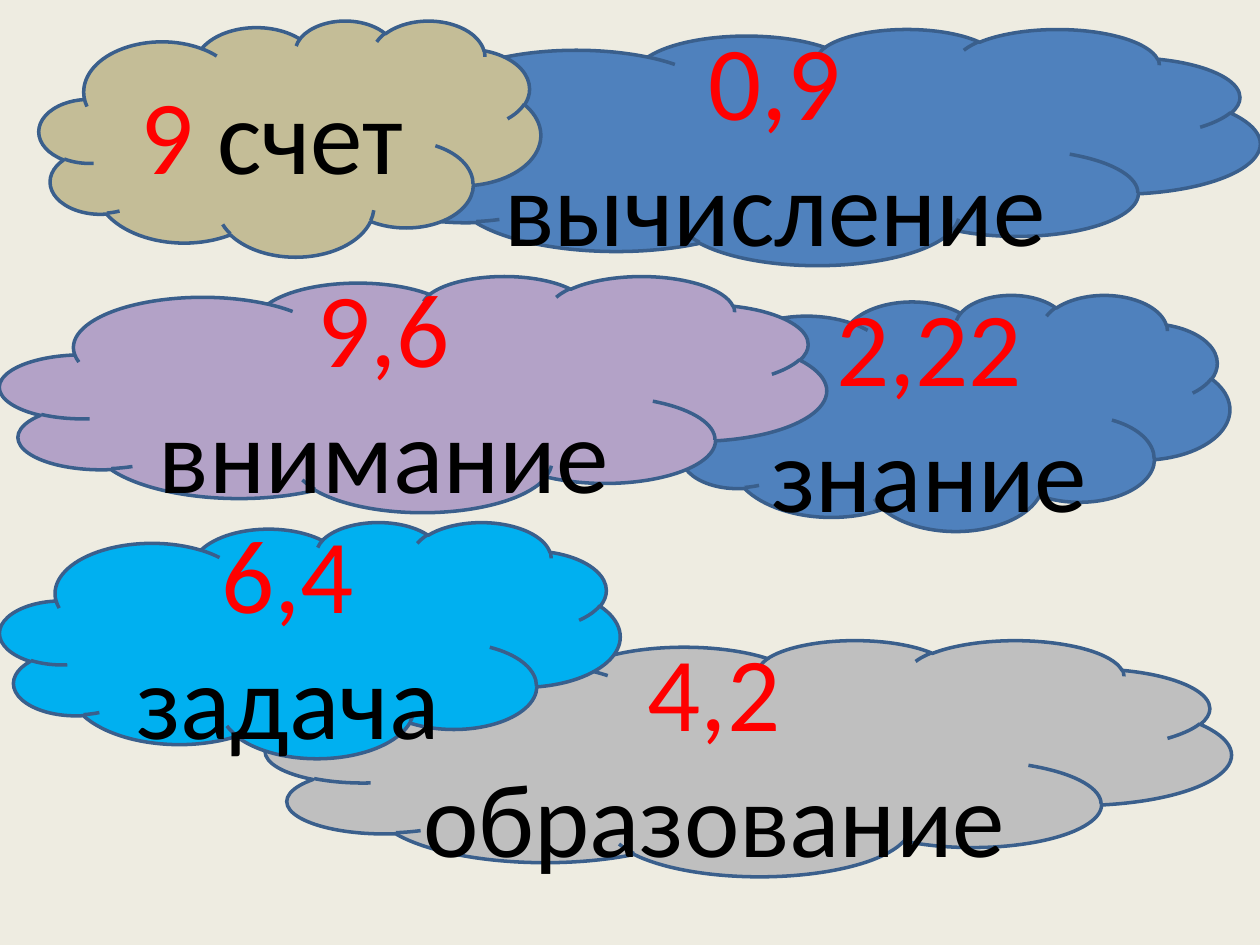
from dataclasses import dataclass

from pptx import Presentation
from pptx.dml.color import RGBColor
from pptx.enum.shapes import MSO_SHAPE
from pptx.enum.text import MSO_ANCHOR, PP_ALIGN
from pptx.util import Cm, Pt


@dataclass(frozen=True)
class Theme:
    font: str = "Calibri"
    size: int = 60
    background: str = "EEECE1"
    outline: str = "3A5F8C"
    number: str = "FF0000"
    word: str = "000000"
    gray: str = "BFBFBF"
    cyan: str = "00B0F0"
    blue: str = "4F81BD"
    lilac: str = "B3A2C7"
    sand: str = "C4BD97"


THEME = Theme()
CLOUD_HEIGHT = 4.76

# Clouds from back to front: number, word, left, top, width (cm), fill
CLOUDS = [
    ("4,2", "образование", 5.36, 12.9, 19.46, THEME.gray),
    ("6,4", "задача", 0, 10.52, 12.5, THEME.cyan),
    ("0,9", "вычисление", 7.14, 0.58, 18.26, THEME.blue),
    ("2,22", "знание", 13.49, 5.94, 11.3, THEME.blue),
    ("9,6", "внимание", 0, 5.56, 16.66, THEME.lilac),
    ("9", "счет", 0.79, 0.41, 10.11, THEME.sand),
]


def set_background(s):
    fill = s.background.fill
    fill.solid()
    fill.fore_color.rgb = RGBColor.from_string(THEME.background)


def add_run(p, text, color):
    r = p.add_run()
    r.text = text
    r.font.name = THEME.font
    r.font.size = Pt(THEME.size)
    r.font.color.rgb = RGBColor.from_string(color)


def add_cloud(s, number, word, left, top, width, color):
    sp = s.shapes.add_shape(MSO_SHAPE.CLOUD, Cm(left), Cm(top),
                            Cm(width), Cm(CLOUD_HEIGHT))
    sp.shadow.inherit = False
    sp.fill.solid()
    sp.fill.fore_color.rgb = RGBColor.from_string(color)
    sp.line.color.rgb = RGBColor.from_string(THEME.outline)
    sp.line.width = Pt(2)

    # Red number followed by a black word
    tf = sp.text_frame
    tf.word_wrap = True
    tf.vertical_anchor = MSO_ANCHOR.MIDDLE
    p = tf.paragraphs[0]
    p.alignment = PP_ALIGN.CENTER
    add_run(p, number, THEME.number)
    add_run(p, f" {word}", THEME.word)


def main():
    prs = Presentation()
    prs.slide_width, prs.slide_height = Cm(25.4), Cm(19.05)
    s = prs.slides.add_slide(prs.slide_layouts[6])
    set_background(s)
    for cloud in CLOUDS:
        add_cloud(s, *cloud)
    prs.save("out.pptx")


if __name__ == "__main__":
    main()
